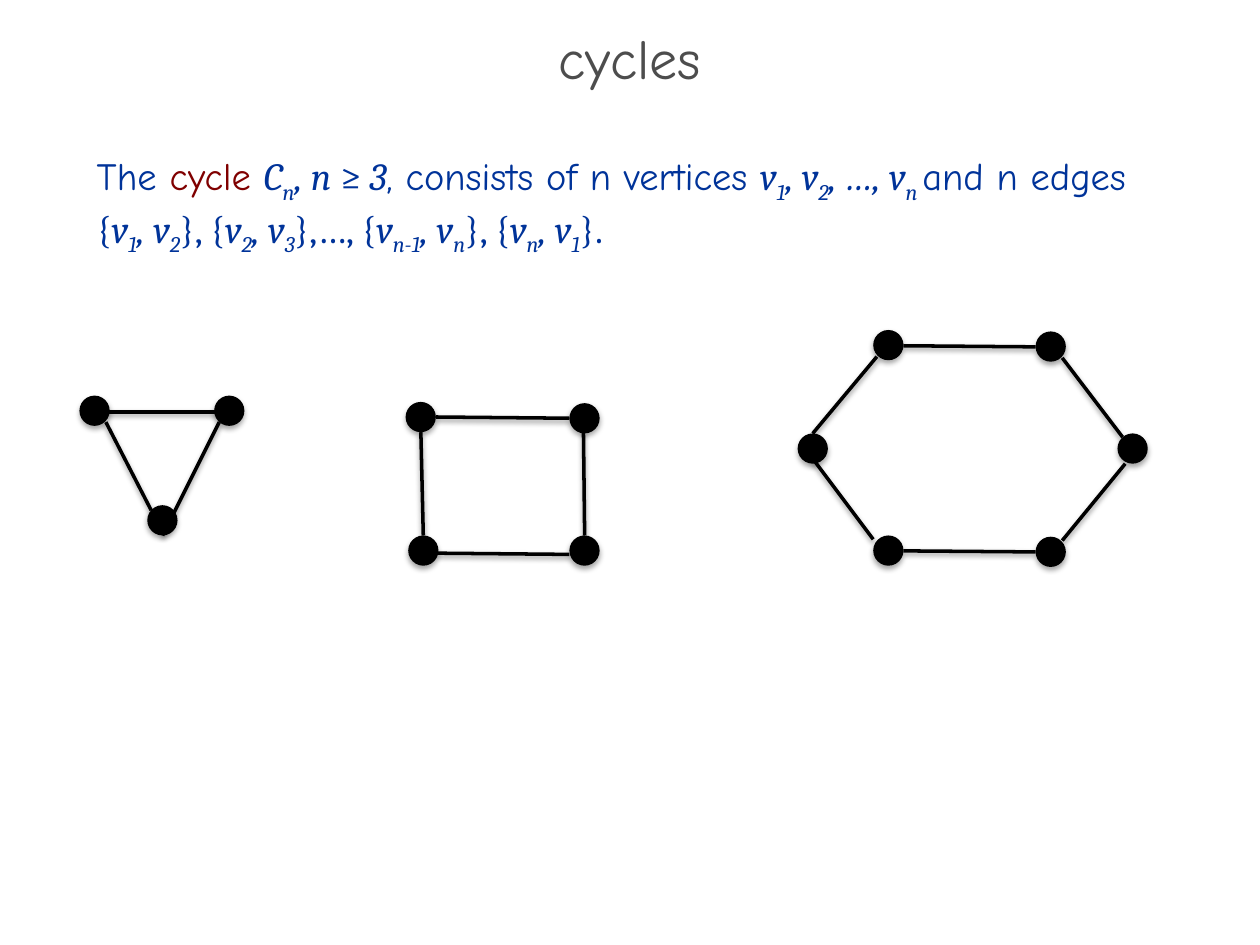
from pptx import Presentation
from pptx.dml.color import RGBColor
from pptx.enum.shapes import MSO_CONNECTOR as Line, MSO_SHAPE as Shape
from pptx.enum.text import MSO_ANCHOR as Anchor, PP_ALIGN as Align
from pptx.oxml import parse_xml
from pptx.util import Pt

NS = "http://schemas.openxmlformats.org/drawingml/2006/main"
SANS, MATH = "Comic Neue", "Cambria"
BLUE, RED, GREY, BLACK = "003399", "800000", "4D4D4D", "000000"
DOT = 17.28


def color(code):
    return RGBColor.from_string(code)


def shade(item, dist, alpha):
    """Put a soft shadow straight below a shape or line."""
    item.element.spPr.append(parse_xml(
        f'<a:effectLst xmlns:a="{NS}">'
        f'<a:outerShdw blurRad="{Pt(3.1)}" dist="{Pt(dist)}" dir="5400000" rotWithShape="0">'
        f'<a:srgbClr val="{BLACK}"><a:alpha val="{alpha * 1000}"/></a:srgbClr>'
        '</a:outerShdw></a:effectLst>'))


def write(para, text, size=22, font=SANS, tint=BLUE, slant=False, sub=False):
    run = para.add_run()
    run.text = text
    run.font.size = Pt(size)
    run.font.name = font
    run.font.italic = slant
    run.font.color.rgb = color(tint)
    if sub:
        run.font._element.set("baseline", "-25000")


def math(para, *parts):
    """Write italic parts, with every second one as a subscript."""
    for i, part in enumerate(parts):
        write(para, part, font=MATH, slant=True, sub=i % 2 == 1)


class Page:
    def __init__(self, deck):
        self.slide = deck.slides.add_slide(deck.slide_layouts[6])
        self.ink, self.width = BLACK, 2

    def box(self, x, y, w, h, anchor=Anchor.TOP):
        """Add a text box and return its first paragraph."""
        frame = self.slide.shapes.add_textbox(Pt(x), Pt(y), Pt(w), Pt(h)).text_frame
        frame.word_wrap = True
        frame.vertical_anchor = anchor
        return frame.paragraphs[0]

    def dot(self, group, x, y):
        dot = group.shapes.add_shape(Shape.OVAL, Pt(x), Pt(y), Pt(DOT), Pt(DOT))
        dot.fill.solid()
        dot.fill.fore_color.rgb = color(self.ink)
        dot.line.fill.background()
        shade(dot, 1.8, 35)

    def edge(self, group, *ends):
        edge = group.shapes.add_connector(Line.STRAIGHT, *map(Pt, ends))
        edge.line.color.rgb = color(self.ink)
        edge.line.width = Pt(self.width)
        shade(edge, 1.6, 38)

    def graph(self, dots, edges):
        group = self.slide.shapes.add_group_shape()
        for spot in dots:
            self.dot(group, *spot)
        for ends in edges:
            self.edge(group, *ends)


# Each graph: left and top of its dots, then both ends of its edges
GRAPHS = [
    ([(45.4, 226.1), (84.2, 288.7), (122.4, 226.1)],
     [(60.5, 241.2, 86.4, 291.6), (125.3, 241.2, 92.9, 306),
      (125.3, 235.4, 60.5, 235.4)]),
    ([(231.8, 229.7), (325.4, 306), (233.3, 306), (325.4, 230.4)],
     [(325.4, 239, 249.1, 238.3), (241.9, 306, 240.5, 247),
      (334.1, 306, 333.4, 245.5), (325.4, 316.8, 249.1, 316.1)]),
    ([(499, 188.6), (591.8, 189.4), (499, 306), (591.8, 306.7),
      (455.8, 247.7), (638.6, 247.7)],
     [(591.8, 198.2, 516.2, 197.6), (591.8, 315.4, 516.2, 314.8),
      (501.1, 203.8, 464.4, 247.7), (643, 265, 607, 308.9),
      (607, 204.5, 641.5, 249.8), (464.4, 262.1, 499, 308.2)]),
]
PAIRS = [("1", "2", "}, {"), ("2", "3", "},…, {"),
         ("n-1", "n", "}, {"), ("n", "1", "}.")]


def main():
    deck = Presentation()
    deck.slide_width, deck.slide_height = Pt(720), Pt(540)
    page = Page(deck)

    title = page.box(0, 19.4, 720, 36, Anchor.MIDDLE)
    title.alignment = Align.CENTER
    title.line_spacing = 0.7
    write(title, "cycles", size=32, tint=GREY)

    body = page.box(48.2, 83.5, 617.8, 426.2)
    body.space_after = Pt(6)
    write(body, "The ")
    write(body, "cycle ", tint=RED)
    math(body, "C", "n", ", n ")
    write(body, "≥", font=MATH)
    math(body, " 3")
    write(body, ", consists of n vertices ")
    math(body, "v", "1", ", v", "2", ", …, v", "n ")
    write(body, "and n edges ")
    write(body, "{", font=MATH)
    for a, b, end in PAIRS:
        math(body, "v", a, ", v", b)
        write(body, end, font=MATH)

    for dots, edges in GRAPHS:
        page.graph(dots, edges)
    deck.save("out.pptx")


if __name__ == "__main__":
    main()
